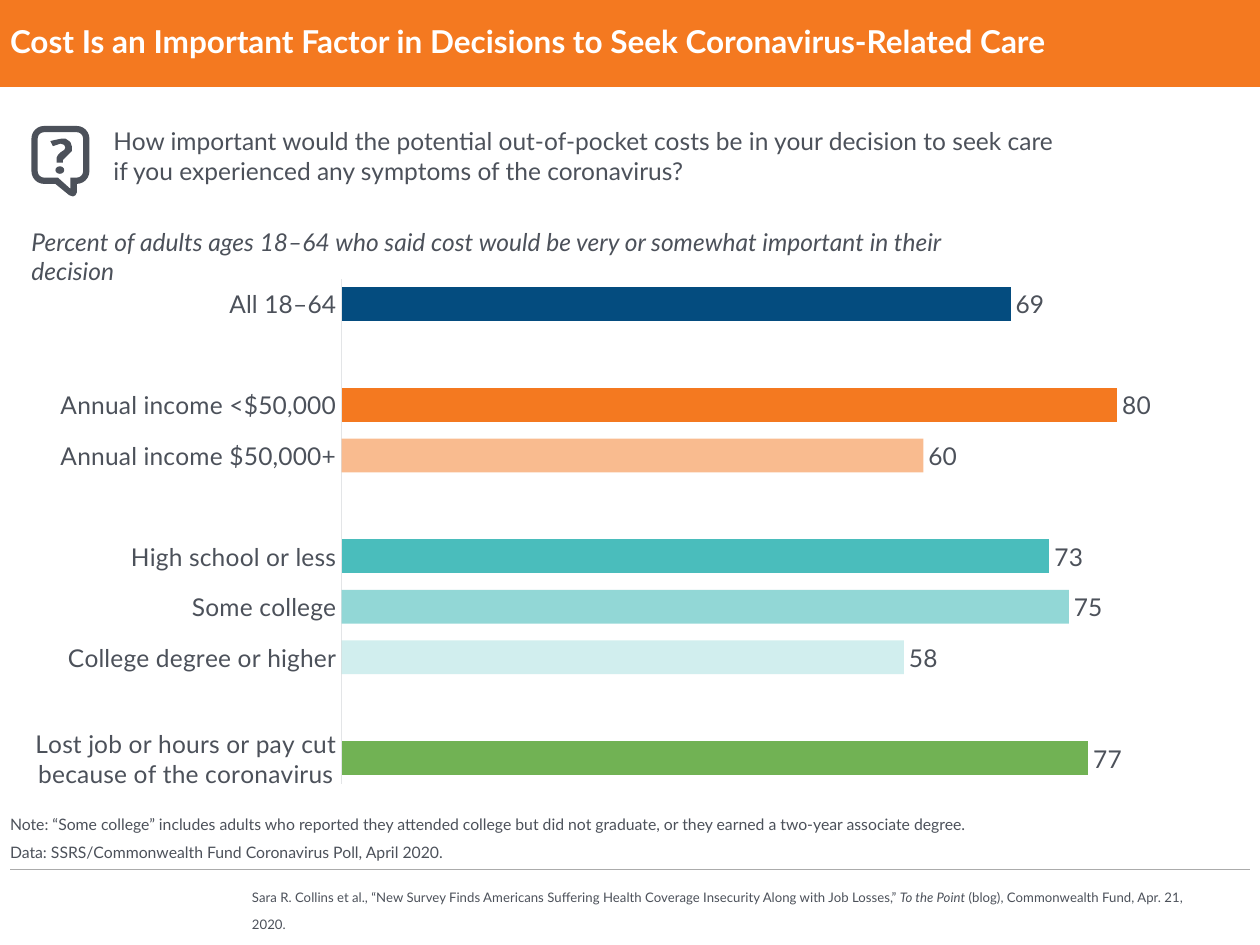
import math

from lxml import etree
from pptx import Presentation
from pptx.chart.data import CategoryChartData
from pptx.dml.color import RGBColor
from pptx.enum.chart import XL_CHART_TYPE, XL_LABEL_POSITION, XL_TICK_MARK
from pptx.enum.shapes import MSO_CONNECTOR, MSO_SHAPE
from pptx.enum.text import MSO_ANCHOR
from pptx.oxml import parse_xml
from pptx.oxml.ns import nsdecls, qn
from pptx.util import Inches, Pt

BAR = XL_CHART_TYPE.BAR_CLUSTERED
OUTSIDE = XL_LABEL_POSITION.OUTSIDE_END
NO_TICK = XL_TICK_MARK.NONE
TOP, MIDDLE, BOTTOM = MSO_ANCHOR.TOP, MSO_ANCHOR.MIDDLE, MSO_ANCHOR.BOTTOM

ORANGE = RGBColor(0xF4, 0x79, 0x20)
NAVY = RGBColor(0x04, 0x4C, 0x7F)
TEAL = RGBColor(0x4A, 0xBD, 0xBC)
GREEN = RGBColor(0x71, 0xB2, 0x54)
SLATE = RGBColor(0x4C, 0x51, 0x5A)
RULE = RGBColor(0xAB, 0xAB, 0xAB)
AXIS = RGBColor(0xE3, 0xE5, 0xE7)
WHITE = RGBColor(0xFF, 0xFF, 0xFF)

# Bottom to top: label, percent, colour, opacity
GROUPS = [
    ("Lost job or hours or pay cut because of the coronavirus", 77, GREEN, 100),
    ("", None, None, 100),
    ("College degree or higher", 58, TEAL, 25),
    ("Some college", 75, TEAL, 60),
    ("High school or less", 73, TEAL, 100),
    ("", None, None, 100),
    ("Annual income $50,000+", 60, ORANGE, 50),
    ("Annual income <$50,000", 80, ORANGE, 100),
    ("", None, None, 100),
    ("All 18–64", 69, NAVY, 100),
]
PLOT = {"x": 0.258, "y": 0.187, "w": 0.726, "h": 0.778}
QUESTION_MARK = [
    (0.3, 0.12), (0.27, 0.1), (0.24, 0.1), (0.19, 0.11), (0.15, 0.12),
    (0.17, 0.16), (0.2, 0.15), (0.23, 0.14), (0.26, 0.15), (0.27, 0.17),
    (0.26, 0.19), (0.23, 0.21), (0.21, 0.23), (0.2, 0.25), (0.2, 0.29),
    (0.25, 0.29), (0.25, 0.27), (0.27, 0.25), (0.3, 0.22), (0.32, 0.2),
    (0.32, 0.16), (0.31, 0.13),
]


def set_font(font, size, color=SLATE):
    font.name = "Lato"
    font.size = Pt(size)
    font.color.rgb = color


def fill_plain(s, color):
    s.shadow.inherit = False
    s.fill.solid()
    s.fill.fore_color.rgb = color
    s.line.fill.background()


def add_text(slide, box, lines, size, color=SLATE, anchor=TOP, insets=(0, 0, 0, 0)):
    tf = slide.shapes.add_textbox(*map(Inches, box)).text_frame
    tf.word_wrap = True
    tf.vertical_anchor = anchor
    tf.margin_left, tf.margin_top, tf.margin_right, tf.margin_bottom = map(Inches, insets)
    for i, line in enumerate(lines):
        p = tf.paragraphs[0] if i == 0 else tf.add_paragraph()
        p.text = line
        set_font(p.font, size, color)
    return tf


def add_header(slide, x, y, w, h):
    band = slide.shapes.add_shape(MSO_SHAPE.RECTANGLE, *map(Inches, (x, y, w, h)))
    fill_plain(band, ORANGE)
    title = "Cost Is an Important Factor in Decisions to Seek Coronavirus-Related Care"
    p = add_text(slide, (x + 0.08, y, w - 0.16, h), [title], 18, WHITE, MIDDLE).paragraphs[0]
    p.font.bold = True
    p.line_spacing = 0.9


def rounded_outline(inset, size, radius, tail):
    """Clockwise square with round corners and a tail in its bottom edge."""
    near, far = inset + radius, inset + size - radius
    corners = [(near, near, 180), (far, near, 270), (far, far, 0), (near, far, 90)]
    points = []
    for cx, cy, start in corners:
        if start == 90:
            points += tail
        for step in range(7):
            a = math.radians(start + 15 * step)
            points.append((cx + radius * math.cos(a), cy + radius * math.sin(a)))
    return points


def add_outline(slide, x, y, contours):
    paths = [[(Inches(x + px), Inches(y + py)) for px, py in c] for c in contours]
    fb = slide.shapes.build_freeform(*paths[0][0])
    for i, path in enumerate(paths):
        if i:
            fb.move_to(*path[0])
        fb.add_line_segments(path[1:], close=True)
    fill_plain(fb.convert_to_shape(), SLATE)


def add_question_icon(slide, x, y):
    outer = rounded_outline(0, 0.46, 0.1, [
        (0.36, 0.46), (0.36, 0.53), (0.35, 0.55), (0.33, 0.56), (0.3, 0.55), (0.19, 0.46)])
    inner = rounded_outline(0.05, 0.36, 0.05, [(0.31, 0.41), (0.31, 0.5), (0.21, 0.41)])
    add_outline(slide, x, y, [outer, inner[::-1]])
    add_outline(slide, x, y, [QUESTION_MARK])
    dot = slide.shapes.add_shape(
        MSO_SHAPE.OVAL, *map(Inches, (x + 0.19, y + 0.32, 0.07, 0.06)))
    fill_plain(dot, SLATE)


def add_question(slide, x, y, w, h):
    add_question_icon(slide, x + 0.05, y + 0.12)
    add_text(slide, (x, y, w, h), [
        "How important would the potential out-of-pocket costs be in your decision "
        "to seek care if you experienced any symptoms of the coronavirus?"
    ], 14, anchor=MIDDLE, insets=(0.7, 0.05, 0.1, 0.05))


def add_bar_chart(slide, x, y, w, h):
    data = CategoryChartData()
    data.categories = [g[0] for g in GROUPS]
    data.add_series("Series 1", [g[1] for g in GROUPS])
    chart = slide.shapes.add_chart(BAR, *map(Inches, (x, y, w, h)), data).chart
    chart.has_legend = False
    chart.has_title = False
    set_font(chart.font, 14)

    # Axes
    cat, val = chart.category_axis, chart.value_axis
    cat.major_tick_mark = NO_TICK
    cat.format.line.color.rgb = AXIS
    cat.format.line.width = Pt(0.75)
    set_font(cat.tick_labels.font, 14)
    val.minimum_scale, val.maximum_scale = 0, 90
    val.has_major_gridlines = False
    val.visible = False

    # Bars and labels
    plot = chart.plots[0]
    plot.gap_width = 49
    plot.vary_by_categories = False
    series = plot.series[0]
    series.format.fill.solid()
    series.format.fill.fore_color.rgb = NAVY
    for i, (_, value, color, opacity) in enumerate(GROUPS):
        if value is None:
            continue
        fill = series.points[i].format.fill
        fill.solid()
        fill.fore_color.rgb = color
        if opacity < 100:
            clr = series.points[i].format.fill._xPr.find(".//" + qn("a:srgbClr"))
            etree.SubElement(clr, qn("a:alpha")).set("val", str(opacity * 1000))
    labels = series.data_labels
    labels.show_value = True
    labels.position = OUTSIDE
    set_font(labels.font, 14)

    # Fixed inner plot area
    area = chart._chartSpace.chart.plotArea
    for old in area.findall(qn("c:layout")):
        area.remove(old)
    sizes = "".join(f'<c:{k} val="{v}"/>' for k, v in PLOT.items())
    area.insert(0, parse_xml(
        f'<c:layout {nsdecls("c")}><c:manualLayout><c:layoutTarget val="inner"/>'
        f'<c:xMode val="edge"/><c:yMode val="edge"/>{sizes}</c:manualLayout></c:layout>'))


def add_footer(slide, x, y, w):
    # Notes above the rule
    notes = add_text(slide, (x, y, w, 0.54), [
        "Note: “Some college” includes adults who reported they attended college "
        "but did not graduate, or they earned a two-year associate degree.",
        "Data: SSRS/Commonwealth Fund Coronavirus Poll, April 2020.",
    ], 9, anchor=BOTTOM)
    for p in notes.paragraphs:
        p.line_spacing = 0.9
        p.space_after = Pt(6)
    rule = slide.shapes.add_connector(
        MSO_CONNECTOR.STRAIGHT, *map(Inches, (x, y + 0.6, x + w, y + 0.6)))
    rule.line.color.rgb = RULE
    rule.line.width = Pt(0.75)
    etree.SubElement(rule._element.spPr, qn("a:effectLst"))

    # Raised citation below the rule
    p = add_text(slide, (2, y + 0.8, 7.6, 0.3), [""], 13, anchor=MIDDLE).paragraphs[0]
    for text, italic in [
        ("Sara R. Collins et al., “New Survey Finds Americans Suffering Health "
         "Coverage Insecurity Along with Job Losses,” ", False),
        ("To the Point", True),
        (" (blog), Commonwealth Fund, Apr. 21, 2020.", False),
    ]:
        r = p.add_run()
        r.text = text
        r.font.italic = italic
        r.font._element.set("baseline", "30000")


prs = Presentation()
prs.slide_width, prs.slide_height = Inches(10), Inches(7.5)
slide = prs.slides.add_slide(prs.slide_layouts[6])
add_header(slide, 0, 0, 10, 0.69)
add_question(slide, 0.2, 0.88, 8.42, 0.71)
add_bar_chart(slide, 0.25, 1.25, 9.54, 5.15)
subtitle = add_text(slide, (0.25, 1.8, 7.86, 0.16), [
    "Percent of adults ages 18–64 who said cost would be very or somewhat "
    "important in their decision"], 14)
subtitle.paragraphs[0].font.italic = True
add_footer(slide, 0.08, 6.3, 9.84)
prs.save("out.pptx")
